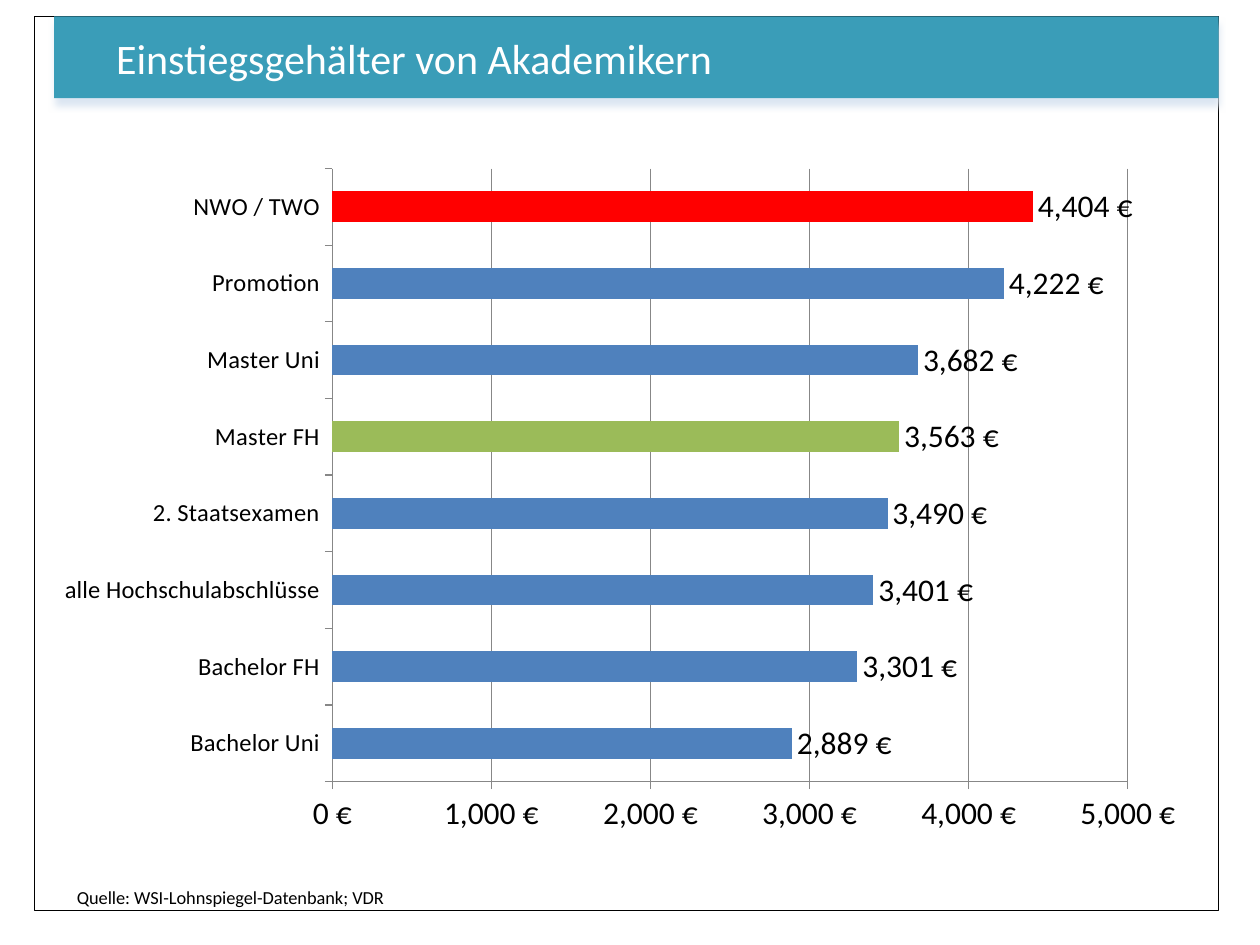
from dataclasses import dataclass

from lxml import etree
from pptx import Presentation
from pptx import util as u
from pptx.chart.data import CategoryChartData
from pptx.dml.color import RGBColor
from pptx.enum import chart as charts, shapes, text
from pptx.oxml import parse_xml
from pptx.oxml.ns import nsdecls, qn


@dataclass(frozen=True)
class Theme:
    font: str = "Calibri"
    ink: str = "000000"
    paper: str = "FFFFFF"
    banner: str = "3A9DB8"
    shadow: str = "DCE6F2"
    bar: str = "4F81BD"
    master_fh: str = "9BBB59"
    nwo: str = "FF0000"
    grid: str = "878787"
    title_size: float = 24
    chart_size: float = 18
    category_size: float = 14
    source_size: float = 10.5


THEME = Theme()
EURO_FORMAT = '#,##0\\ "€"'
SALARIES = {
    "Bachelor Uni": 2889,
    "Bachelor FH": 3301,
    "alle Hochschulabschlüsse": 3401,
    "2. Staatsexamen": 3490,
    "Master FH": 3563,
    "Master Uni": 3682,
    "Promotion": 4222,
    "NWO / TWO": 4404,
}
HIGHLIGHTS = {"Master FH": THEME.master_fh, "NWO / TWO": THEME.nwo}


def color(value):
    return RGBColor.from_string(value)


def paint(fill, value):
    fill.solid()
    fill.fore_color.rgb = color(value)


def style_font(font, size, value=THEME.ink):
    font.name = THEME.font
    font.size = u.Pt(size)
    font.bold = False
    font.color.rgb = color(value)


def add_run(para, words, size, value=THEME.ink):
    span = para.add_run()
    span.text = words
    style_font(span.font, size, value)


def add_rectangle(page, left, top, width, height):
    box = page.shapes.add_shape(
        shapes.MSO_SHAPE.RECTANGLE, u.Cm(left), u.Cm(top), u.Cm(width), u.Cm(height))
    box.shadow.inherit = False
    return box


def add_frame(page):
    frame = add_rectangle(page, 0.69, 0.33, 23.88, 18.03)
    frame.fill.background()
    frame.line.color.rgb = color(THEME.ink)
    frame.line.width = u.Pt(0.5)


def add_drop_shadow(box):
    effects = box._element.spPr.find(qn("a:effectLst"))
    effects.append(parse_xml(
        f'<a:outerShdw {nsdecls("a")} blurRad="50800" dist="50800" dir="5400000" '
        f'algn="t" rotWithShape="0"><a:srgbClr val="{THEME.shadow}"/></a:outerShdw>'))


def add_banner(page, words):
    banner = add_rectangle(page, 1.09, 0.33, 23.48, 1.65)
    paint(banner.fill, THEME.banner)
    banner.line.fill.background()
    add_drop_shadow(banner)
    frame = banner.text_frame
    frame.word_wrap = True
    frame.vertical_anchor = text.MSO_ANCHOR.MIDDLE
    para = frame.paragraphs[0]
    para.alignment = text.PP_ALIGN.LEFT
    para._p.get_or_add_pPr().set("marL", str(u.Cm(1)))
    add_run(para, words, THEME.title_size, THEME.paper)


def place_plot(chart, **fractions):
    """Fix the inner plot area, given as fractions of the chart."""
    area = chart._chartSpace.chart.plotArea
    for layout in area.findall(qn("c:layout")):
        area.remove(layout)
    layout = etree.Element(qn("c:layout"))
    manual = etree.SubElement(layout, qn("c:manualLayout"))
    settings = {"layoutTarget": "inner", "xMode": "edge", "yMode": "edge", **fractions}
    for name, value in settings.items():
        etree.SubElement(manual, qn(f"c:{name}")).set("val", str(value))
    area.insert(0, layout)


def style_axis(axis, size):
    axis.major_tick_mark = charts.XL_TICK_MARK.OUTSIDE
    axis.minor_tick_mark = charts.XL_TICK_MARK.NONE
    axis.format.line.color.rgb = color(THEME.grid)
    axis.format.line.width = u.Pt(0.75)
    style_font(axis.tick_labels.font, size)


def style_axes(chart):
    style_axis(chart.category_axis, THEME.category_size)
    values = chart.value_axis
    style_axis(values, THEME.chart_size)
    values.minimum_scale, values.maximum_scale, values.major_unit = 0, 5000, 1000
    values.tick_labels.number_format = EURO_FORMAT
    values.tick_labels.number_format_is_linked = False
    values.has_major_gridlines = True
    gridline = values.major_gridlines.format.line
    gridline.color.rgb = color(THEME.grid)
    gridline.width = u.Pt(0.75)


def style_bars(plot):
    plot.gap_width = 150
    plot.vary_by_categories = False
    series = plot.series[0]
    paint(series.format.fill, THEME.bar)
    for index, category in enumerate(SALARIES):
        if category in HIGHLIGHTS:
            paint(series.points[index].format.fill, HIGHLIGHTS[category])
    labels = series.data_labels
    labels.show_value = True
    labels.number_format = EURO_FORMAT
    labels.number_format_is_linked = False
    labels.position = charts.XL_LABEL_POSITION.OUTSIDE_END
    style_font(labels.font, THEME.chart_size)


def add_salary_chart(page):
    data = CategoryChartData(number_format=EURO_FORMAT)
    data.categories = list(SALARIES)
    data.add_series("Series 1", list(SALARIES.values()))
    chart = page.shapes.add_chart(
        charts.XL_CHART_TYPE.BAR_CLUSTERED,
        u.Cm(0.89), u.Cm(3.12), u.Cm(23.24), u.Cm(13.89), data).chart
    chart.has_legend = False
    chart.has_title = False
    style_font(chart.font, THEME.chart_size)
    place_plot(chart, x=0.25, y=0.02, w=0.69, h=0.89)
    style_axes(chart)
    style_bars(chart.plots[0])


def add_source(page, words):
    box = page.shapes.add_textbox(u.Cm(1.3), u.Cm(17.73), u.Cm(7.19), u.Cm(0.74))
    frame = box.text_frame
    frame.word_wrap = False
    frame.auto_size = text.MSO_AUTO_SIZE.SHAPE_TO_FIT_TEXT
    add_run(frame.paragraphs[0], words, THEME.source_size)


def main():
    deck = Presentation()
    deck.slide_width, deck.slide_height = u.Cm(25.4), u.Cm(19.05)
    page = deck.slides.add_slide(deck.slide_layouts[6])
    paint(page.background.fill, THEME.paper)
    add_frame(page)
    add_banner(page, "Einstiegsgehälter von Akademikern")
    add_salary_chart(page)
    add_source(page, "Quelle: WSI-Lohnspiegel-Datenbank; VDR")
    deck.save("out.pptx")


if __name__ == "__main__":
    main()
